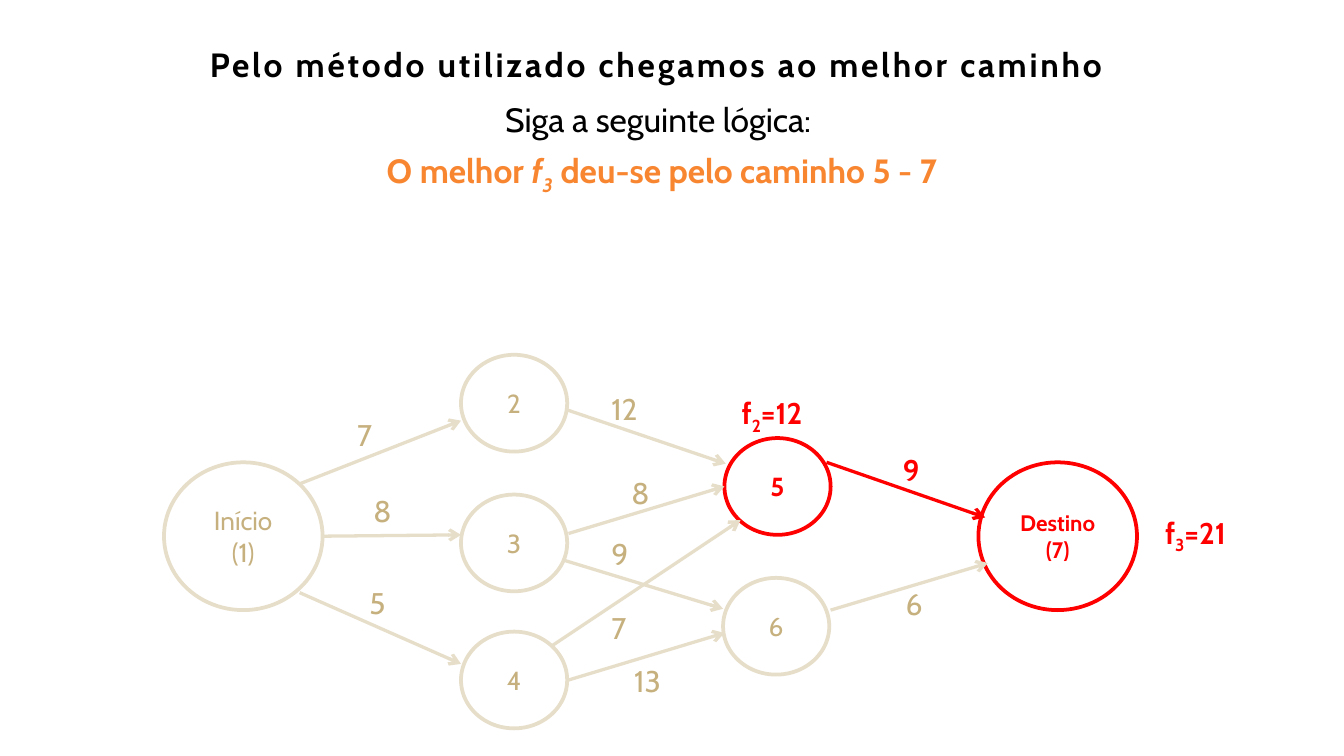
import pptx
import pptx.util
import pptx.dml.color
import pptx.enum.shapes
import pptx.enum.text
import pptx.oxml.ns
from lxml import etree

Inches = pptx.util.Inches
Pt = pptx.util.Pt
Align = pptx.enum.text.PP_ALIGN
Anchor = pptx.enum.text.MSO_ANCHOR
Fit = pptx.enum.text.MSO_AUTO_SIZE
qn = pptx.oxml.ns.qn

HUES = {"ink": "000000", "sand": "E7DEC9", "tan": "C6B07E", "red": "FF0000", "gold": "F88631"}
BIG, SMALL = (1.18, 1.1), (0.79, 0.72)
SUB = {"baseline": "-25000"}

NODES = [
    (1.22, 3.44, BIG, ["Início", "(1)"], 14, False),
    (7.28, 3.44, BIG, ["Destino", "(7)"], 12, True),
    (3.43, 2.64, SMALL, ["2"], 14, False),
    (3.43, 3.68, SMALL, ["3"], 14, False),
    (3.43, 4.7, SMALL, ["4"], 14, False),
    (5.39, 3.26, SMALL, ["5"], 14, True),
    (5.38, 4.3, SMALL, ["6"], 14, False),
]

EDGES = [
    (2.23, 3.6, 3.43, 3.13, "sand"),
    (2.39, 3.99, 3.43, 3.98, "sand"),
    (2.23, 4.41, 3.43, 4.94, "sand"),
    (4.23, 3.97, 5.39, 3.62, "sand"),
    (4.2, 4.17, 5.38, 4.53, "sand"),
    (4.23, 5.06, 5.39, 4.71, "sand"),
    (4.22, 3.05, 5.4, 3.45, "sand"),
    (4.1, 4.81, 5.51, 3.87, "sand"),
    (6.18, 4.54, 7.35, 4.19, "sand"),
    (6.15, 3.44, 7.33, 3.85, "red"),
]

COSTS = [
    (2.56, 3.05, "7", False),
    (2.68, 3.62, "8", False),
    (2.65, 4.3, "5", False),
    (4.45, 2.86, "12", False),
    (4.6, 3.48, "8", False),
    (4.45, 4.49, "7", False),
    (4.45, 3.94, "9", False),
    (6.62, 3.31, "9", True),
    (6.64, 4.31, "6", False),
    (4.62, 4.88, "13", False),
]

SUMS = [(5.42, 2.89, "2", "=12"), (8.57, 3.78, "3", "=21")]


def color(name):
    """Return the named hue as an RGB colour."""
    return pptx.dml.color.RGBColor.from_string(HUES[name])


def write(frame, lines, hue, align, **font):
    """Fill a frame with lines of (text, font values, XML values) runs."""
    for i, line in enumerate(lines):
        para = frame.paragraphs[0] if i == 0 else frame.add_paragraph()
        para.alignment = align
        for text, extra, marks in line:
            run = para.add_run()
            run.text = text
            for key, value in {"name": "Cabin", **font, **extra}.items():
                setattr(run.font, key, value)
            run.font.color.rgb = color(hue)
            for key, value in marks.items():
                run._r.get_or_add_rPr().set(key, value)


def place(shape, box):
    """Set a shape's left, top, width and height."""
    for key, value in zip(("left", "top", "width", "height"), box):
        setattr(shape, key, Inches(value))


def setup(frame):
    """Make a frame wrap, start at the top and grow with its text."""
    style = {"word_wrap": True, "vertical_anchor": Anchor.TOP, "auto_size": Fit.SHAPE_TO_FIT_TEXT}
    for key, value in style.items():
        setattr(frame, key, value)


def add_text(slide, box, runs, hue, align=Align.LEFT, **font):
    """Add a one-line text box."""
    shape = slide.shapes.add_textbox(*map(Inches, box))
    setup(shape.text_frame)
    write(shape.text_frame, [runs], hue, align, **font)


def add_title(slide, text):
    """Move, format and fill the title placeholder."""
    title = slide.shapes.title
    place(title, (0.79, 0.28, 8.19, 0.4))
    setup(title.text_frame)
    write(title.text_frame, [[(text, {}, {"spc": "150"})]], "ink", Align.CENTER, size=Pt(18), bold=True)


def add_node(slide, left, top, size, lines, pts, best):
    """Add a ringed node of the graph."""
    oval = pptx.enum.shapes.MSO_SHAPE.OVAL
    node = slide.shapes.add_shape(oval, *map(Inches, (left, top, *size)))
    node.shadow.inherit = False
    node.fill.background()
    node.line.color.rgb = color("red" if best else "sand")
    node.line.width = Pt(2)
    node.text_frame.word_wrap = True
    node.text_frame.vertical_anchor = Anchor.MIDDLE
    runs = [[(line, {}, {})] for line in lines]
    write(node.text_frame, runs, "red" if best else "tan", Align.CENTER, size=Pt(pts), bold=best)


def add_edge(slide, x1, y1, x2, y2, hue):
    """Add an arrow between two nodes."""
    kind = pptx.enum.shapes.MSO_CONNECTOR.STRAIGHT
    edge = slide.shapes.add_connector(kind, *map(Inches, (x1, y1, x2, y2)))
    edge.line.color.rgb = color(hue)
    edge.line.width = Pt(1.75)
    etree.SubElement(edge.line._get_or_add_ln(), qn("a:tailEnd")).set("type", "arrow")
    etree.SubElement(edge._element.spPr, qn("a:effectLst"))


def main():
    """Build and save the slide."""
    deck = pptx.Presentation()
    deck.slide_width = Inches(10)
    deck.slide_height = Inches(10 * 9 / 16)
    slide = deck.slides.add_slide(deck.slide_layouts[5])
    add_title(slide, "Pelo método utilizado chegamos ao melhor caminho")
    for node in NODES:
        add_node(slide, *node)
    for edge in EDGES:
        add_edge(slide, *edge)
    for left, top, cost, best in COSTS:
        box = (left, top, 0.27 * len(cost), 0.37)
        add_text(slide, box, [(cost, {}, {})], "red" if best else "tan", size=Pt(16), bold=best)
    lead = [("Siga a seguinte lógica: ", {}, {})]
    add_text(slide, (1.38, 0.69, 7.09, 0.4), lead, "ink", Align.CENTER, size=Pt(18))
    best = [
        ("O melhor ", {}, {}),
        ("f", {"italic": True}, {}),
        ("3", {"italic": True}, SUB),
        (" deu-se pelo caminho 5 - 7", {}, {}),
    ]
    add_text(slide, (1.38, 1.07, 7.09, 0.4), best, "gold", Align.CENTER, size=Pt(18), bold=True)
    for left, top, step, total in SUMS:
        runs = [("f", {}, {}), (step, {}, SUB), (total, {}, {})]
        add_text(slide, (left, top, 0.92, 0.37), runs, "red", size=Pt(16), bold=True)
    deck.save("out.pptx")


if __name__ == "__main__":
    main()
